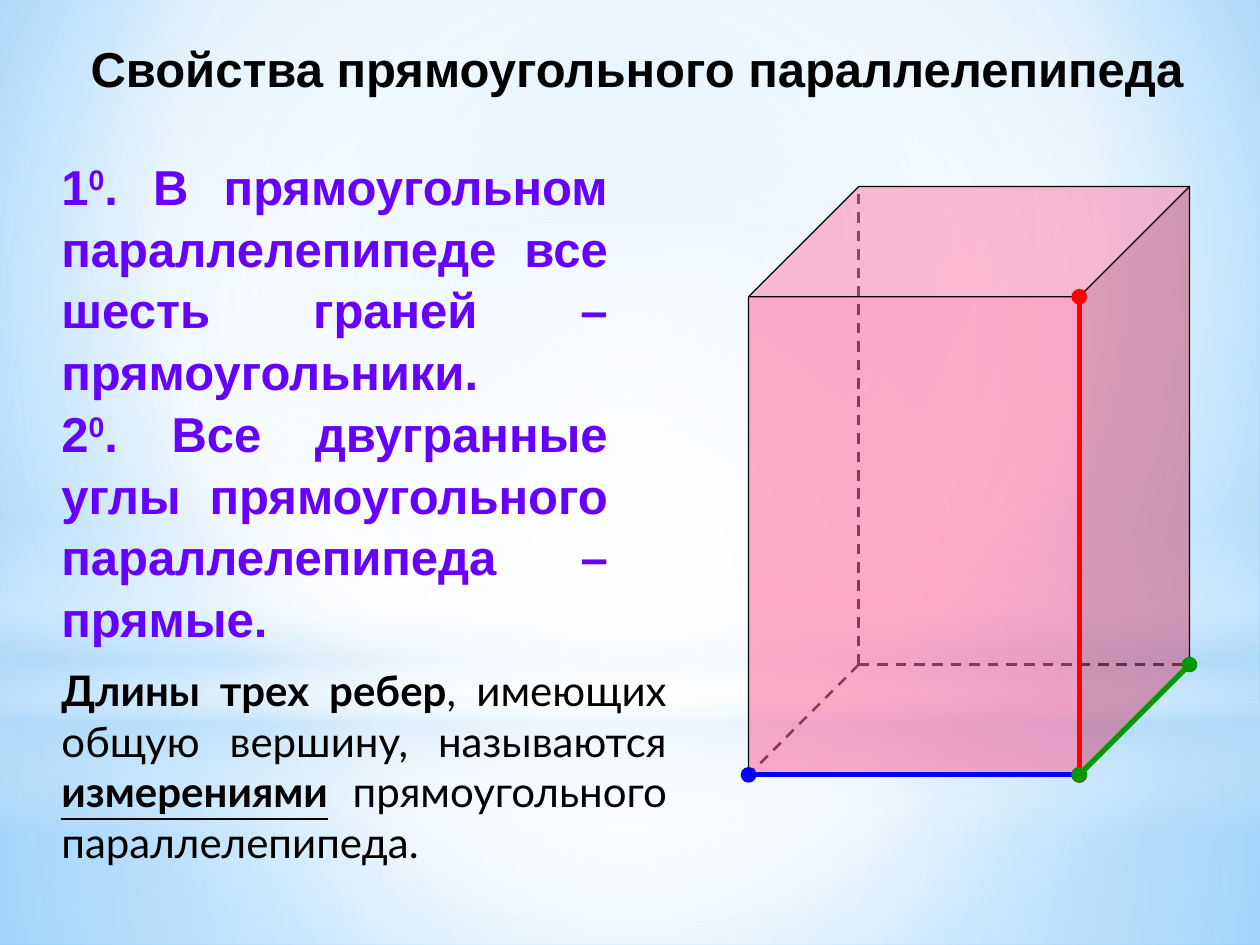
from dataclasses import dataclass

from lxml import etree
from pptx import Presentation
from pptx.dml.color import RGBColor
from pptx.enum.dml import MSO_LINE
from pptx.enum.shapes import MSO_CONNECTOR, MSO_SHAPE
from pptx.enum.text import MSO_ANCHOR, MSO_AUTO_SIZE, PP_ALIGN
from pptx.oxml.ns import qn
from pptx.util import Cm, Pt

RECT, OVAL, CUBE = MSO_SHAPE.RECTANGLE, MSO_SHAPE.OVAL, MSO_SHAPE.CUBE
STRAIGHT = MSO_CONNECTOR.STRAIGHT
DASH = MSO_LINE.DASH
CENTER, JUSTIFY = PP_ALIGN.CENTER, PP_ALIGN.JUSTIFY
TOP = MSO_ANCHOR.TOP
NO_FIT = MSO_AUTO_SIZE.NONE


@dataclass(frozen=True)
class Theme:
    ink: str = "000000"
    accent: str = "6600FF"
    cube: str = "FF6699"
    cube_alpha: int = 55
    length: str = "0000FF"
    height: str = "FF0000"
    depth: str = "009900"
    white: str = "FFFFFF"
    haze: str = "B4DCFA"
    sky: str = "9ED5FF"
    deep_sky: str = "5BB9FF"
    heading_font: str = "Arial"
    body_font: str = "Lato"
    heading_size: int = 28
    body_size: int = 24
    heading_spacing: float = 1.05
    thin: float = 0.75
    hidden: float = 1.5
    thick: float = 3


T = Theme()
HEADING = {"name": T.heading_font, "size": Pt(T.heading_size), "bold": True}
BODY = {"name": T.body_font, "size": Pt(T.body_size), "bold": False}
STRONG = {**BODY, "bold": True}
TERM = {**STRONG, "underline": True}


def rgb(color):
    return RGBColor.from_string(color)


def sub(parent, tag, **attrs):
    return etree.SubElement(parent, qn(tag), {k: str(v) for k, v in attrs.items()})


def set_gradient(el, stops, focus=None, angle=None):
    solid = el.find(".//" + qn("a:solidFill"))
    grad = etree.Element(qn("a:gradFill"), rotWithShape="1")
    gs_lst = sub(grad, "a:gsLst")
    for pos, color, alpha in stops:
        gs = sub(gs_lst, "a:gs", pos=pos * 1000)
        clr = sub(gs, "a:srgbClr", val=color)
        if alpha < 100:
            sub(clr, "a:alpha", val=alpha * 1000)
    if focus:
        path = sub(grad, "a:path", path="circle")
        sub(path, "a:fillToRect", **{k: v * 1000 for k, v in zip("ltrb", focus)})
    else:
        sub(grad, "a:lin", ang=angle * 60000, scaled=0)
    solid.getparent().replace(solid, grad)


def add_backdrop(s, box):
    x, y, w, h = box
    s.background.fill.solid()
    set_gradient(s.element, [(0, T.sky, 100), (60, T.white, 100), (100, T.deep_sky, 100)],
                 focus=(20, 10, 20, 60))
    middle = {"focus": (50, 50, 50, 50)}
    layers = [
        (RECT, 14.17, h - 14.17, middle,
         [(0, T.white, 91), (37, T.white, 76), (100, T.haze, 79)]),
        (RECT, 0, 14.17, middle,
         [(0, T.white, 89), (48, T.white, 62), (100, T.haze, 79)]),
        (RECT, 10.46, 6.35, {"angle": 90},
         [(0, T.white, 0), (29, T.white, 30), (45, T.haze, 40),
          (55, T.white, 26), (65, T.haze, 60), (100, T.white, 0)]),
        (OVAL, 4.45, 14.17, middle, [(0, T.white, 100), (56, T.white, 0)]),
    ]
    for i, (kind, top, height, direction, stops) in enumerate(layers):
        sp = s.shapes.add_shape(kind, Cm(x), Cm(y + top), Cm(w), Cm(height))
        sp.shadow.inherit = False
        sp.line.fill.background()
        sp.fill.solid()
        set_gradient(sp.element, stops, **direction)
        sp.element.getparent().insert(2 + i, sp.element)


def add_run(p, text, fmt, color, baseline=0):
    r = p.add_run()
    r.text = text
    for name, value in fmt.items():
        setattr(r.font, name, value)
    r.font.color.rgb = rgb(color)
    if baseline:
        r._r.get_or_add_rPr().set("baseline", str(baseline * 1000))


def set_frame(tf):
    for name, value in {"word_wrap": True, "auto_size": NO_FIT, "vertical_anchor": TOP}.items():
        setattr(tf, name, value)


def add_title(s, box):
    sp = s.shapes.title
    sp.left, sp.top, sp.width, sp.height = map(Cm, box)
    set_frame(sp.text_frame)
    p = sp.text_frame.paragraphs[0]
    p.alignment, p.line_spacing = CENTER, T.heading_spacing
    add_run(p, "Свойства прямоугольного параллелепипеда", HEADING, T.ink)


def add_properties(s, box):
    tf = s.shapes.add_textbox(*map(Cm, box)).text_frame
    set_frame(tf)
    properties = [
        "В прямоугольном параллелепипеде все шесть граней – прямоугольники.",
        "Все двугранные углы прямоугольного параллелепипеда – прямые.",
    ]
    for i, text in enumerate(properties):
        p = tf.add_paragraph() if i else tf.paragraphs[0]
        p.alignment, p.line_spacing = JUSTIFY, T.heading_spacing
        add_run(p, str(i + 1), HEADING, T.accent)
        add_run(p, "0", HEADING, T.accent, baseline=30)
        add_run(p, ". " + text, HEADING, T.accent)


def add_definition(s, box):
    tf = s.shapes.add_textbox(*map(Cm, box)).text_frame
    set_frame(tf)
    p = tf.paragraphs[0]
    p.alignment = JUSTIFY
    for text, fmt in [
        ("Длины трех ребер", STRONG),
        (", имеющих общую вершину, называются ", BODY),
        ("измерениями", TERM),
        (" прямоугольного параллелепипеда.", BODY),
    ]:
        add_run(p, text, fmt, T.ink)


def add_edge(shapes, start, end, color, width, dashed=False):
    edge = shapes.add_connector(STRAIGHT, *map(Cm, start + end))
    edge.line.color.rgb = rgb(color)
    edge.line.width = Pt(width)
    if dashed:
        edge.line.dash_style = DASH
    else:
        ln = edge.line._get_or_add_ln()
        sub(ln, "a:headEnd", type="oval")
        sub(ln, "a:tailEnd", type="oval")
    sub(edge.element.spPr, "a:effectLst")


def add_cuboid(s, box):
    x, y, w, h = box
    ratio = 0.25
    d = ratio * min(w, h)
    shapes = s.shapes.add_group_shape().shapes

    back_corner = (x + d, y + h - d)
    right_corner = (x + w, y + h - d)
    left_corner = (x, y + h)
    front_corner = (x + w - d, y + h)
    for end in [right_corner, (x + d, y), left_corner]:
        add_edge(shapes, back_corner, end, T.ink, T.hidden, dashed=True)

    sp = shapes.add_shape(CUBE, *map(Cm, box))
    sp.adjustments[0] = ratio
    sp.shadow.inherit = False
    sp.fill.solid()
    sp.fill.fore_color.rgb = rgb(T.cube)
    sub(sp.element.spPr.find(".//" + qn("a:srgbClr")), "a:alpha", val=T.cube_alpha * 1000)
    sp.line.color.rgb = rgb(T.ink)
    sp.line.width = Pt(T.thin)

    for start, color in [
        (left_corner, T.length),
        ((x + w - d, y + d), T.height),
        (right_corner, T.depth),
    ]:
        add_edge(shapes, start, front_corner, color, T.thick)


def main():
    prs = Presentation()
    prs.slide_width, prs.slide_height = Cm(25.4), Cm(19.05)
    s = prs.slides.add_slide(prs.slide_layouts[5])
    add_backdrop(s, (0, 0, 25.4, 19.05))
    add_title(s, (0.58, 0.58, 24.52, 2.49))
    add_definition(s, (0.99, 13.28, 12.7, 4.37))
    add_cuboid(s, (15.09, 3.76, 8.89, 11.86))
    add_properties(s, (0.99, 2.97, 11.51, 9.83))
    prs.save("out.pptx")


if __name__ == "__main__":
    main()
